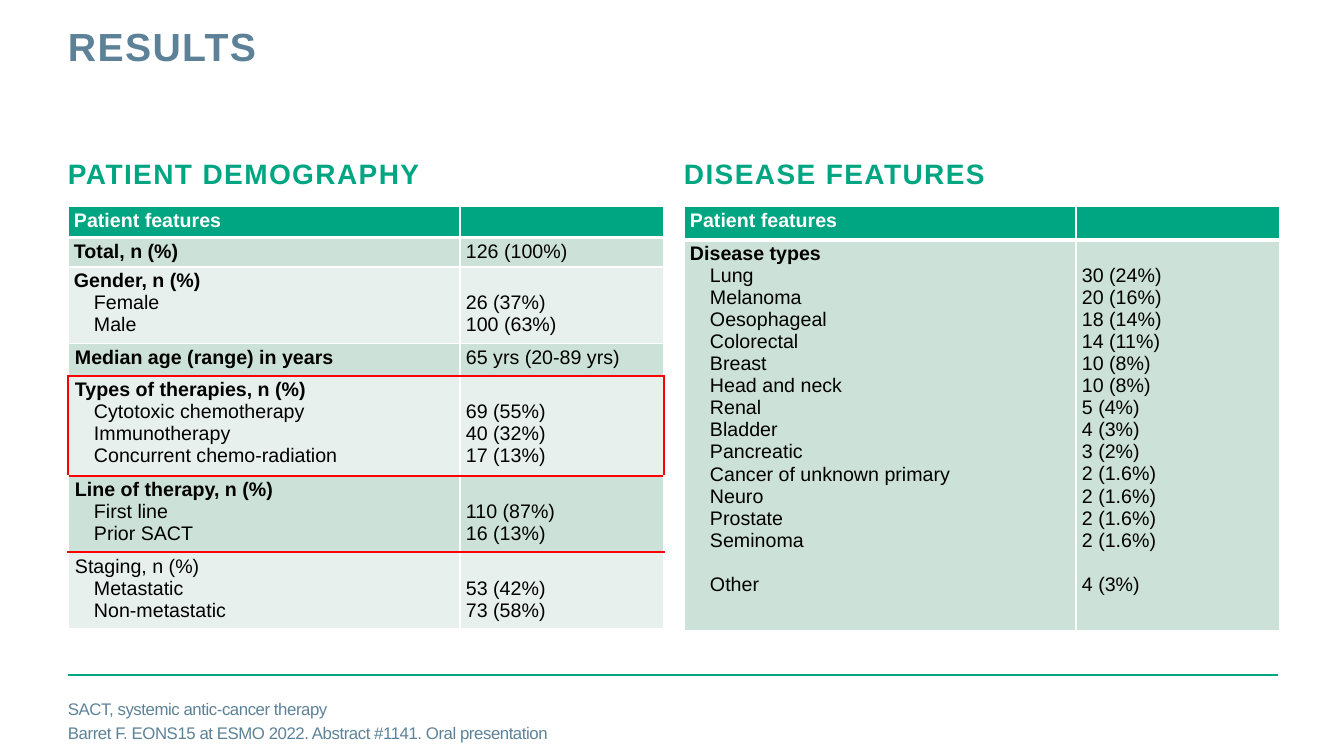
from dataclasses import dataclass

import pptx
import pptx.dml.color
import pptx.enum.shapes
import pptx.enum.text
import pptx.oxml
import pptx.oxml.ns
import pptx.util
from lxml import etree

RGBColor = pptx.dml.color.RGBColor
GREEN = RGBColor(0x00, 0xA5, 0x82)
SLATE = RGBColor(0x5D, 0x82, 0x98)
SAGE = RGBColor(0xCC, 0xE1, 0xD8)
MIST = RGBColor(0xE7, 0xF0, 0xED)
RED = RGBColor(0xFF, 0x00, 0x00)
WHITE = RGBColor(0xFF, 0xFF, 0xFF)
BLACK = RGBColor(0x00, 0x00, 0x00)

EMU_PER_PX = 914400 / 100.8
FONT = "Arial"
CELL_SIZE = 14
LINE_HEIGHT = 22
ITEM_INDENT = 20
COLUMN_WIDTHS = (392, 204)
TABLE_TOP = 206


@dataclass(frozen=True)
class Style:
    size: float
    color: RGBColor
    bold: bool = False
    tracking: int = 0


@dataclass(frozen=True)
class Edge:
    color: RGBColor
    points: float


@dataclass(frozen=True)
class Line:
    text: str
    style: Style
    indent: int = 0
    space_before: float = 0
    line_spacing: float = 0


@dataclass(frozen=True)
class Item:
    label: str
    value: str
    space_before: float = 0


THIN = Edge(WHITE, 1)
THICK = Edge(WHITE, 3)
HIGHLIGHT = Edge(RED, 1.5)


@dataclass(frozen=True)
class Feature:
    heading: str
    height: int
    fill: RGBColor
    items: tuple[Item, ...] = ()
    value: str = ""
    bold: bool = True
    indent: int = 0
    side: Edge = THIN
    bottom: Edge = THIN
    color: RGBColor = BLACK
    margin: int = 3


@dataclass(frozen=True)
class Panel:
    title: str
    left: int
    features: tuple[Feature, ...]


TITLE = Style(28, SLATE, True, 100)
PANEL_TITLE = Style(20, GREEN, True, 100)
FOOTNOTE = Style(12, SLATE, tracking=-30)


def header(height: int) -> Feature:
    return Feature("Patient features", height, GREEN, bottom=THICK, color=WHITE, margin=4)


PANELS = (
    Panel("PATIENT DEMOGRAPHY", 68, (
        header(31),
        Feature("Total, n (%)", 28, SAGE, value="126 (100%)"),
        Feature("Gender, n (%)", 73, MIST,
                (Item("Female", "26 (37%)"), Item("Male", "100 (63%)"))),
        Feature("Median age (range) in years", 32, SAGE, value="65 yrs (20-89 yrs)",
                indent=1, bottom=HIGHLIGHT),
        Feature("Types of therapies, n (%)", 94, MIST,
                (Item("Cytotoxic chemotherapy", "69 (55%)"),
                 Item("Immunotherapy", "40 (32%)"),
                 Item("Concurrent chemo-radiation", "17 (13%)")),
                indent=1, side=HIGHLIGHT, bottom=HIGHLIGHT),
        Feature("Line of therapy, n (%)", 73, SAGE,
                (Item("First line", "110 (87%)"), Item("Prior SACT", "16 (13%)")),
                indent=1, bottom=HIGHLIGHT),
        Feature("Staging, n (%)", 72, MIST,
                (Item("Metastatic", "53 (42%)"), Item("Non-metastatic", "73 (58%)")),
                bold=False, indent=1),
    )),
    Panel("DISEASE FEATURES", 684, (
        header(34),
        Feature("Disease types", 391, SAGE, (
            Item("Lung", "30 (24%)"),
            Item("Melanoma", "20 (16%)"),
            Item("Oesophageal", "18 (14%)"),
            Item("Colorectal", "14 (11%)"),
            Item("Breast", "10 (8%)"),
            Item("Head and neck", "10 (8%)"),
            Item("Renal", "5 (4%)"),
            Item("Bladder", "4 (3%)"),
            Item("Pancreatic", "3 (2%)"),
            Item("Cancer of unknown primary", "2 (1.6%)"),
            Item("Neuro", "2 (1.6%)"),
            Item("Prostate", "2 (1.6%)"),
            Item("Seminoma", "2 (1.6%)"),
            Item("Other", "4 (3%)", space_before=16),
        )),
    )),
)


def px(length: int) -> pptx.util.Emu:
    return pptx.util.Emu(round(length * EMU_PER_PX))


def write_lines(frame, lines: list[Line]) -> None:
    for index, line in enumerate(lines):
        paragraph = frame.add_paragraph() if index else frame.paragraphs[0]
        if line.indent:
            paragraph._p.get_or_add_pPr().set("marL", str(px(line.indent)))
        if line.space_before:
            paragraph.space_before = pptx.util.Pt(line.space_before)
        if line.line_spacing:
            paragraph.line_spacing = pptx.util.Pt(line.line_spacing)
        run = paragraph.add_run()
        run.text = line.text
        run.font.name = FONT
        run.font.size = pptx.util.Pt(line.style.size)
        run.font.bold = line.style.bold
        run.font.color.rgb = line.style.color
        if line.style.tracking:
            run._r.get_or_add_rPr().set("spc", str(line.style.tracking))


def add_text(slide, box: tuple[int, int, int, int], lines: list[Line],
             anchor=pptx.enum.text.MSO_ANCHOR.TOP) -> None:
    frame = slide.shapes.add_textbox(*map(px, box)).text_frame
    frame.word_wrap = True
    frame.vertical_anchor = anchor
    frame.margin_left = frame.margin_top = frame.margin_right = frame.margin_bottom = 0
    write_lines(frame, lines)


def set_edges(cell, edges: dict[str, Edge]) -> None:
    properties = cell._tc.get_or_add_tcPr()
    for side in "LRTB":
        edge = edges[side]
        border = etree.SubElement(properties, pptx.oxml.ns.qn(f"a:ln{side}"),
                                  w=str(pptx.util.Pt(edge.points)))
        fill = etree.SubElement(border, pptx.oxml.ns.qn("a:solidFill"))
        etree.SubElement(fill, pptx.oxml.ns.qn("a:srgbClr"), val=str(edge.color))


def fill_cell(cell, feature: Feature, lines: list[Line], edges: dict[str, Edge], drop: int) -> None:
    set_edges(cell, edges)
    cell.fill.solid()
    cell.fill.fore_color.rgb = feature.fill
    cell.margin_left = cell.margin_right = px(6)
    cell.margin_top = px(feature.margin + drop)
    cell.margin_bottom = px(feature.margin)
    if lines:
        write_lines(cell.text_frame, lines)
    else:
        etree.SubElement(cell.text_frame.paragraphs[0]._p, pptx.oxml.ns.qn("a:endParaRPr"),
                         sz=str(CELL_SIZE * 100))


def add_panel(slide, panel: Panel) -> None:
    add_text(slide, (panel.left, 157, 561, 40), [Line(panel.title, PANEL_TITLE)])
    height = sum(feature.height for feature in panel.features)
    table = slide.shapes.add_table(
        len(panel.features), 2, px(panel.left), px(TABLE_TOP),
        px(sum(COLUMN_WIDTHS)), px(height)).table
    table.horz_banding = False
    for column, width in zip(table.columns, COLUMN_WIDTHS):
        column.width = px(width)
    top = THIN
    for index, feature in enumerate(panel.features):
        table.rows[index].height = px(feature.height)
        plain = Style(CELL_SIZE, feature.color)
        labels = [Line(feature.heading, Style(CELL_SIZE, feature.color, feature.bold), feature.indent)]
        labels += [Line(item.label, plain, ITEM_INDENT, item.space_before) for item in feature.items]
        values = [Line(feature.value, plain)] if feature.value else []
        values += [Line(item.value, plain, 0, item.space_before) for item in feature.items]
        drop = LINE_HEIGHT if feature.items else 0
        edges = {"T": top, "B": feature.bottom}
        fill_cell(table.cell(index, 0), feature, labels, {**edges, "L": feature.side, "R": THIN}, 0)
        fill_cell(table.cell(index, 1), feature, values, {**edges, "L": THIN, "R": feature.side}, drop)
        top = feature.bottom


def add_rule(slide) -> None:
    rule = slide.shapes.add_connector(
        pptx.enum.shapes.MSO_CONNECTOR.STRAIGHT, px(68), px(675), px(1278), px(675))
    rule.line.color.rgb = GREEN
    rule.line.width = pptx.util.Pt(2)
    etree.SubElement(rule._element.spPr, pptx.oxml.ns.qn("a:effectLst"))


def main() -> None:
    deck = pptx.Presentation()
    deck.slide_width, deck.slide_height = px(1344), px(756)
    slide = deck.slides.add_slide(deck.slide_layouts[6])
    add_rule(slide)
    add_text(slide, (68, 27, 964, 89), [Line("RESULTS", TITLE, line_spacing=30)])
    for panel in PANELS:
        add_panel(slide, panel)
    add_text(slide, (68, 701, 1122, 40), [
        Line("SACT, systemic antic-cancer therapy", FOOTNOTE),
        Line("Barret F. EONS15 at ESMO 2022. Abstract #1141. Oral presentation", FOOTNOTE,
             space_before=3),
    ], pptx.enum.text.MSO_ANCHOR.MIDDLE)
    deck.save("out.pptx")


if __name__ == "__main__":
    main()
